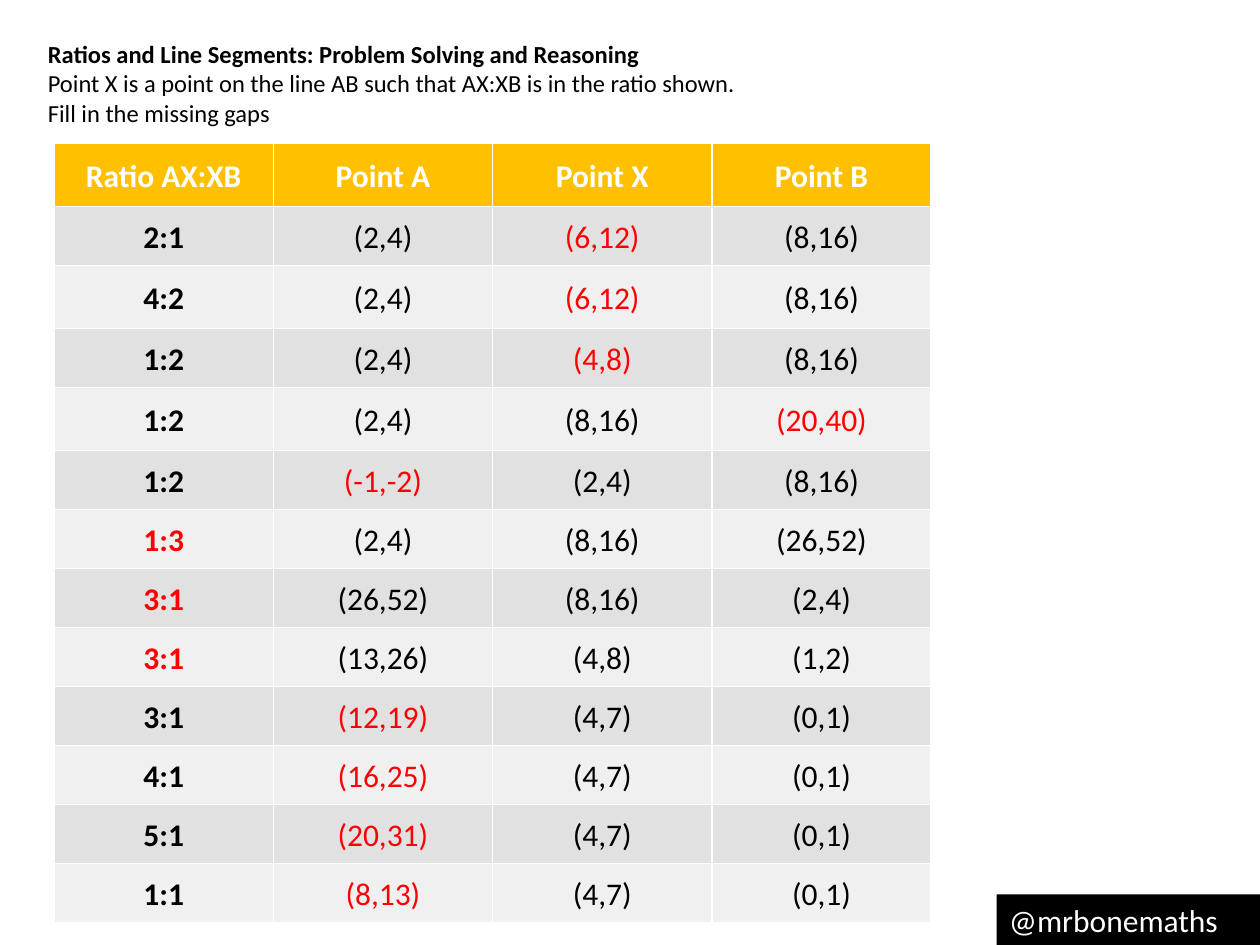
from dataclasses import dataclass

from pptx import Presentation
from pptx.dml.color import RGBColor
from pptx.enum.shapes import MSO_SHAPE
from pptx.enum.text import MSO_ANCHOR, MSO_AUTO_SIZE, PP_ALIGN
from pptx.util import Cm, Pt

RECTANGLE = MSO_SHAPE.RECTANGLE
MIDDLE = MSO_ANCHOR.MIDDLE
GROW = MSO_AUTO_SIZE.SHAPE_TO_FIT_TEXT
LEFT = PP_ALIGN.LEFT
CENTER = PP_ALIGN.CENTER


@dataclass(frozen=True)
class Theme:
    font: str = "Calibri"
    heading_size: int = 14
    body_size: int = 18
    text: str = "000000"
    inverse: str = "FFFFFF"
    answer: str = "FF0000"
    header: str = "FFC000"
    bands: tuple = ("E1E1E1", "F0F0F0")


HEADING = [
    "Ratios and Line Segments: Problem Solving and Reasoning",
    "Point X is a point on the line AB such that AX:XB is in the ratio shown.",
    "Fill in the missing gaps",
]
COLUMNS = ["Ratio AX:XB", "Point A", "Point X", "Point B"]
RATIO, POINT_A, POINT_X, POINT_B = range(len(COLUMNS))
QUESTIONS = [
    (["2:1", "(2,4)", "(6,12)", "(8,16)"], POINT_X),
    (["4:2", "(2,4)", "(6,12)", "(8,16)"], POINT_X),
    (["1:2", "(2,4)", "(4,8)", "(8,16)"], POINT_X),
    (["1:2", "(2,4)", "(8,16)", "(20,40)"], POINT_B),
    (["1:2", "(-1,-2)", "(2,4)", "(8,16)"], POINT_A),
    (["1:3", "(2,4)", "(8,16)", "(26,52)"], RATIO),
    (["3:1", "(26,52)", "(8,16)", "(2,4)"], RATIO),
    (["3:1", "(13,26)", "(4,8)", "(1,2)"], RATIO),
    (["3:1", "(12,19)", "(4,7)", "(0,1)"], POINT_A),
    (["4:1", "(16,25)", "(4,7)", "(0,1)"], POINT_A),
    (["5:1", "(20,31)", "(4,7)", "(0,1)"], POINT_A),
    (["1:1", "(8,13)", "(4,7)", "(0,1)"], POINT_A),
]
COLUMN_WIDTH = 4.42
ROW_HEIGHT = 1.19
TALL_ROW_HEIGHT = 1.27
TALL_ROWS = (0, 2, 4)


def apply_format(target, values):
    for name, value in values.items():
        setattr(target, name, value)


class SlideBuilder:
    def __init__(self, slide, theme):
        self.slide = slide
        self.theme = theme

    def add_text(self, paragraph, text, size, color, bold=False, **paragraph_format):
        run = paragraph.add_run()
        run.text = text
        apply_format(paragraph, paragraph_format)
        apply_format(run.font, {"name": self.theme.font, "size": Pt(size), "bold": bold})
        run.font.color.rgb = RGBColor.from_string(color)

    def add_heading(self, lines, left, top, width, height):
        title = self.slide.shapes.title
        apply_format(title, {"left": Cm(left), "top": Cm(top),
                             "width": Cm(width), "height": Cm(height)})
        frame = title.text_frame
        apply_format(frame, {"word_wrap": True, "auto_size": GROW, "vertical_anchor": MIDDLE})
        for index, line in enumerate(lines):
            paragraph = frame.add_paragraph() if index else frame.paragraphs[0]
            self.add_text(paragraph, line, self.theme.heading_size, self.theme.text,
                          bold=index == 0, alignment=LEFT)

    def add_label(self, text, left, top, width, height):
        shape = self.slide.shapes.add_shape(RECTANGLE, Cm(left), Cm(top), Cm(width), Cm(height))
        shape.shadow.inherit = False
        shape.fill.solid()
        shape.fill.fore_color.rgb = RGBColor.from_string(self.theme.text)
        shape.line.fill.background()
        apply_format(shape.text_frame, {"word_wrap": True, "auto_size": GROW})
        self.add_text(shape.text_frame.paragraphs[0], text, self.theme.body_size,
                      self.theme.inverse, alignment=LEFT)

    def fill_cell(self, cell, text, fill, color, bold):
        cell.fill.solid()
        cell.fill.fore_color.rgb = RGBColor.from_string(fill)
        apply_format(cell, {"vertical_anchor": MIDDLE, "margin_left": Cm(0.18),
                            "margin_right": Cm(0.18), "margin_top": 0, "margin_bottom": 0})
        self.add_text(cell.text_frame.paragraphs[0], text, self.theme.body_size, color, bold,
                      alignment=CENTER, line_spacing=1.07)

    def add_question_table(self, columns, questions, left, top):
        heights = [TALL_ROW_HEIGHT if index in TALL_ROWS else ROW_HEIGHT
                   for index in range(len(questions) + 1)]
        table = self.slide.shapes.add_table(
            len(heights), len(columns), Cm(left), Cm(top),
            Cm(COLUMN_WIDTH * len(columns)), Cm(sum(heights))).table
        for row, height in zip(table.rows, heights):
            row.height = Cm(height)
        for column, text in enumerate(columns):
            self.fill_cell(table.cell(0, column), text, self.theme.header,
                           self.theme.inverse, True)
        for row, (values, answer) in enumerate(questions, start=1):
            fill = self.theme.bands[(row - 1) % 2]
            for column, text in enumerate(values):
                color = self.theme.answer if column == answer else self.theme.text
                self.fill_cell(table.cell(row, column), text, fill, color, column == RATIO)


def main():
    presentation = Presentation()
    presentation.slide_width = Cm(25.4)
    presentation.slide_height = Cm(19.05)
    slide = presentation.slides.add_slide(presentation.slide_layouts[5])
    builder = SlideBuilder(slide, Theme())
    builder.add_label("@mrbonemaths", 20.09, 18.03, 5.31, 1.02)
    builder.add_question_table(COLUMNS, QUESTIONS, 1.09, 2.89)
    builder.add_heading(HEADING, 0.71, 0.64, 23.32, 2.06)
    presentation.save("out.pptx")


if __name__ == "__main__":
    main()
